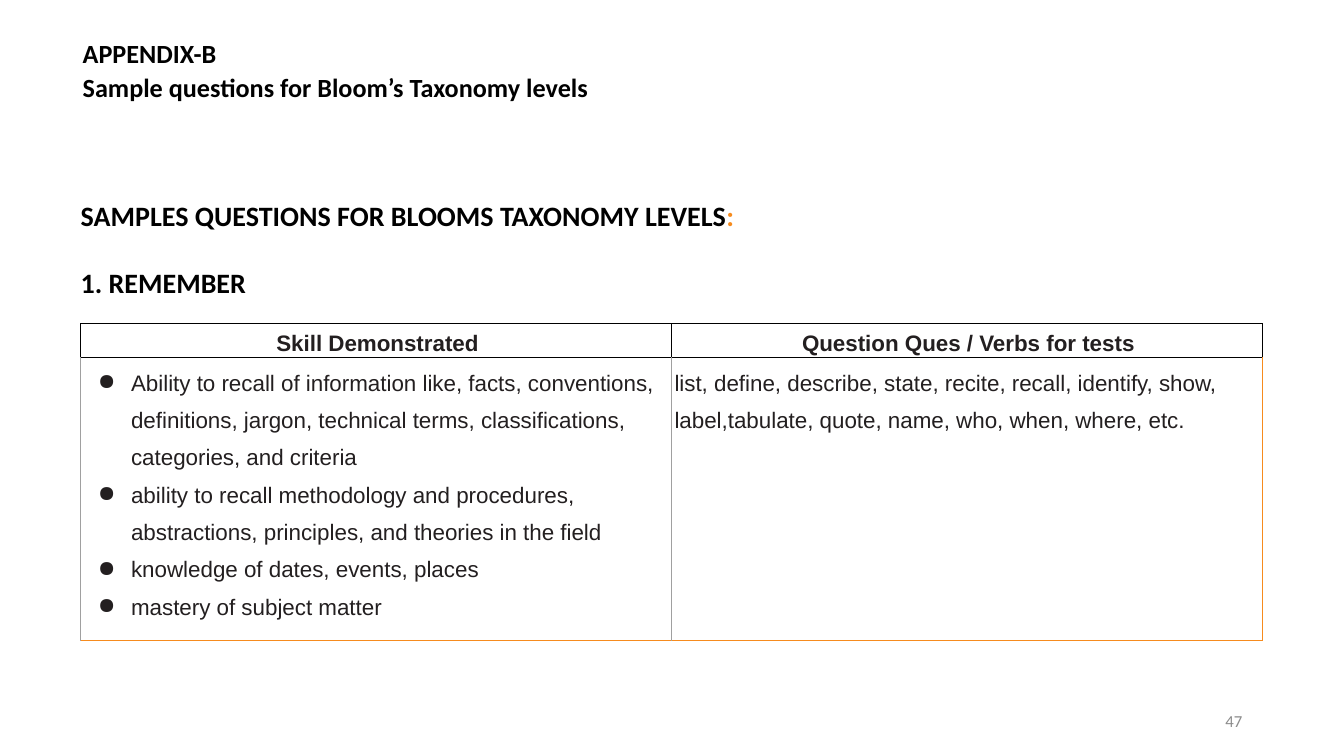
from lxml import etree
from pptx import Presentation
from pptx.dml.color import RGBColor
from pptx.enum import text
from pptx.oxml import ns
from pptx.util import Inches, Pt

BLACK = RGBColor(0x00, 0x00, 0x00)
INK = RGBColor(0x23, 0x1F, 0x20)
ORANGE = RGBColor(0xF6, 0x8B, 0x1E)
RULE_GRAY = RGBColor(0xA0, 0xA0, 0xA0)
NUMBER_GRAY = RGBColor(0x8C, 0x8C, 0x8C)

HEADERS = ["Skill Demonstrated", "Question Ques / Verbs for tests"]
SKILLS = [
    "Ability to recall of information like, facts, conventions, definitions, "
    "jargon, technical terms, classifications, categories, and criteria",
    "ability to recall methodology and procedures, abstractions, principles, "
    "and theories in the field",
    "knowledge of dates, events, places",
    "mastery of subject matter",
]
VERBS = [
    "list, define, describe, state, recite, recall, identify, show, "
    "label,tabulate, quote, name, who, when, where, etc."
]


def format_run(run, font_name, size, color, bold=False):
    run.font.name = font_name
    run.font.size = Pt(size)
    run.font.bold = bold
    run.font.color.rgb = color


def set_margins(frame, top):
    frame.margin_left = frame.margin_right = frame.margin_bottom = 0
    frame.margin_top = Inches(top)


def set_indent(paragraph, left, first=0):
    properties = paragraph._p.get_or_add_pPr()
    properties.set("marL", str(Inches(left)))
    properties.set("indent", str(Inches(first)))
    return properties


def add_bullet(paragraph):
    properties = set_indent(paragraph, 0.5, -0.33)
    color = etree.SubElement(properties, ns.qn("a:buClr"))
    etree.SubElement(color, ns.qn("a:srgbClr"), val=str(INK))
    etree.SubElement(properties, ns.qn("a:buChar"), char="●")


def set_borders(cell, **colors):
    properties = cell._tc.get_or_add_tcPr()
    for side in "LRTB":
        line = etree.SubElement(properties, ns.qn("a:ln" + side), w=str(Pt(0.75)))
        fill = etree.SubElement(line, ns.qn("a:solidFill"))
        etree.SubElement(fill, ns.qn("a:srgbClr"), val=str(colors[side]))


def fill_cell(cell, lines, spacing, bold=False, bulleted=False):
    cell.fill.background()
    cell.text_frame.text = "\n".join(lines)
    for paragraph in cell.text_frame.paragraphs:
        paragraph.line_spacing = spacing
        if bulleted:
            add_bullet(paragraph)
        else:
            set_indent(paragraph, 0.03)
        format_run(paragraph.runs[0], "Arial", 16, INK, bold)


def add_title(slide, left, top, width, height):
    title = slide.shapes.title
    title.left, title.top, title.width, title.height = map(
        Inches, (left, top, width, height))
    frame = title.text_frame
    frame.text = "APPENDIX-B\nSample questions for Bloom’s Taxonomy levels"
    frame.auto_size = text.MSO_AUTO_SIZE.NONE
    frame.vertical_anchor = text.MSO_ANCHOR.TOP
    set_margins(frame, 0.02)
    for paragraph, spacing in zip(frame.paragraphs, (1.15, 1.1)):
        paragraph.alignment = text.PP_ALIGN.LEFT
        paragraph.line_spacing = spacing
        paragraph.space_before = Pt(0)
        set_indent(paragraph, 0.02)
        format_run(paragraph.runs[0], "Calibri", 18.7, BLACK, True)


def add_headings(slide, left, top, width, height):
    box = slide.shapes.add_textbox(*map(Inches, (left, top, width, height)))
    frame = box.text_frame
    frame.word_wrap = True
    set_margins(frame, 0.02)
    frame.text = "SAMPLES QUESTIONS FOR BLOOMS TAXONOMY LEVELS\n1. REMEMBER"
    heading, level = frame.paragraphs
    level.space_before = Pt(24)
    for paragraph in (heading, level):
        format_run(paragraph.runs[0], "Calibri", 20, BLACK, True)
    colon = heading.add_run()
    colon.text = ":"
    format_run(colon, "Calibri", 20, ORANGE, True)


def add_skills_table(slide, left, top, width, height):
    header_height = 0.34
    frame = slide.shapes.add_table(2, 2, *map(Inches, (left, top, width, height)))
    table = frame.table
    table.first_row = table.horz_banding = False
    table.rows[0].height = Inches(header_height)
    table.rows[1].height = Inches(height - header_height)
    for column in table.columns:
        column.width = Inches(width / 2)

    for cell, label in zip(table.rows[0].cells, HEADERS):
        set_margins(cell, 0.02)
        set_borders(cell, L=BLACK, R=BLACK, T=BLACK, B=BLACK)
        fill_cell(cell, [label], 1.15, bold=True)
        cell.vertical_anchor = text.MSO_ANCHOR.MIDDLE
        cell.text_frame.paragraphs[0].alignment = text.PP_ALIGN.CENTER

    skills, verbs = table.rows[1].cells
    for cell, lines, right in ((skills, SKILLS, RULE_GRAY), (verbs, VERBS, ORANGE)):
        set_margins(cell, 0.01)
        set_borders(cell, L=RULE_GRAY, R=right, T=BLACK, B=ORANGE)
        fill_cell(cell, lines, 1.5, bulleted=cell is skills)


def add_page_number(slide, left, top, width, height):
    box = slide.shapes.add_textbox(*map(Inches, (left, top, width, height)))
    frame = box.text_frame
    frame.word_wrap = True
    frame.vertical_anchor = text.MSO_ANCHOR.MIDDLE
    frame.text = "47"
    paragraph = frame.paragraphs[0]
    paragraph.alignment = text.PP_ALIGN.RIGHT
    format_run(paragraph.runs[0], "Calibri", 12, NUMBER_GRAY)


def main():
    presentation = Presentation()
    presentation.slide_width = Inches(13.33)
    presentation.slide_height = Inches(7.5)
    slide = presentation.slides.add_slide(presentation.slide_layouts[5])
    add_title(slide, 0.8, 0.3, 11.16, 0.73)
    add_headings(slide, 0.8, 1.95, 8.08, 0.58)
    add_skills_table(slide, 0.8, 3.21, 11.72, 3.1)
    add_page_number(slide, 9.42, 6.95, 3, 0.4)
    presentation.save("out.pptx")


if __name__ == "__main__":
    main()
